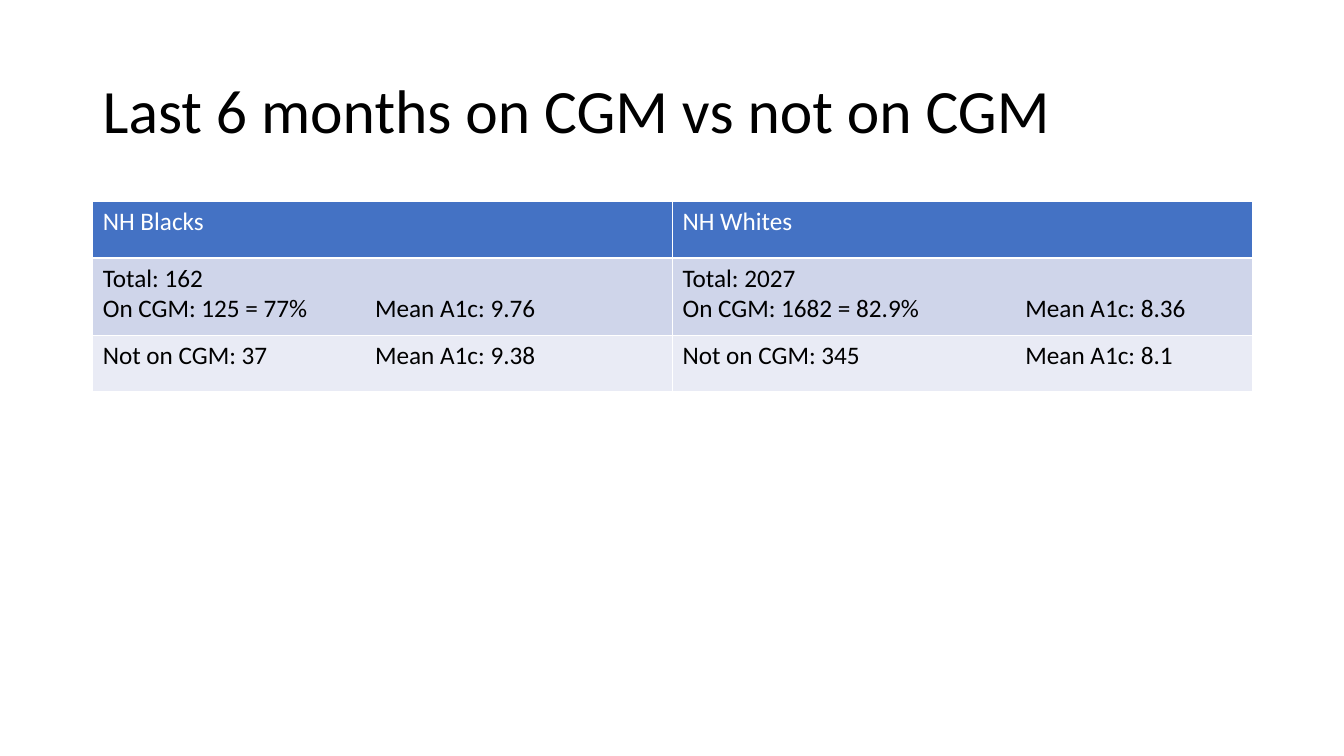
from pptx import Presentation
from pptx.dml.color import RGBColor
from pptx.enum import text
from pptx.oxml import ns
from pptx.util import Inches, Pt
from lxml import etree

FONT = "Calibri"
COLORS = {"ink": "000000", "header_text": "FFFFFF", "header": "4472C4",
          "band_dark": "CFD5EA", "band_light": "E9EBF5"}
TITLE = "Last 6 months on CGM vs not on CGM"
ROWS = [
    ("header", 0.56, ["NH Blacks", "NH Whites"]),
    ("band_dark", 0.77, ["Total: 162\nOn CGM: 125 = 77%\tMean A1c: 9.76",
                         "Total: 2027\nOn CGM: 1682 = 82.9%\tMean A1c: 8.36"]),
    ("band_light", 0.56, ["Not on CGM: 37\tMean A1c: 9.38",
                          "Not on CGM: 345\tMean A1c: 8.1"]),
]
A1C_TABS = [2.7, 3.4]


def color(name):
    return RGBColor.from_string(COLORS[name])


def style_runs(paragraph, size, color_name):
    for run in paragraph.runs:
        run.font.name = FONT
        run.font.size = Pt(size)
        run.font.bold = False
        run.font.color.rgb = color(color_name)


def add_tab_stop(paragraph, position):
    tabs = etree.SubElement(paragraph._p.get_or_add_pPr(), ns.qn("a:tabLst"))
    etree.SubElement(tabs, ns.qn("a:tab"), pos=str(Inches(position)), algn="l")


def add_title(slide, left, top, width, height):
    frame = slide.shapes.add_textbox(
        Inches(left), Inches(top), Inches(width), Inches(height)).text_frame
    frame.word_wrap = True
    frame.vertical_anchor = text.MSO_ANCHOR.MIDDLE
    frame.text = TITLE
    heading = frame.paragraphs[0]
    heading.line_spacing = 0.9
    style_runs(heading, 44, "ink")


def add_comparison(slide, left, top, width):
    """Table of CGM use and mean A1c, one column per group."""
    height = sum(row_height for _, row_height, _ in ROWS)
    table = slide.shapes.add_table(
        len(ROWS), len(A1C_TABS), Inches(left), Inches(top),
        Inches(width), Inches(height)).table
    for column in table.columns:
        column.width = Inches(width / len(A1C_TABS))
    for r, (fill, row_height, entries) in enumerate(ROWS):
        table.rows[r].height = Inches(row_height)
        text_color = "header_text" if fill == "header" else "ink"
        for c, entry in enumerate(entries):
            cell = table.cell(r, c)
            cell.fill.solid()
            cell.fill.fore_color.rgb = color(fill)
            cell.text_frame.text = entry
            for paragraph in cell.text_frame.paragraphs:
                if "\t" in paragraph.text:
                    add_tab_stop(paragraph, A1C_TABS[c])
                style_runs(paragraph, 18, text_color)


def main():
    deck = Presentation()
    deck.slide_width, deck.slide_height = Inches(13.33), Inches(7.5)
    slide = deck.slides.add_slide(deck.slide_layouts[6])
    add_title(slide, 0.92, 0.4, 11.5, 1.45)
    add_comparison(slide, 0.92, 2, 11.5)
    deck.save("out.pptx")


if __name__ == "__main__":
    main()
